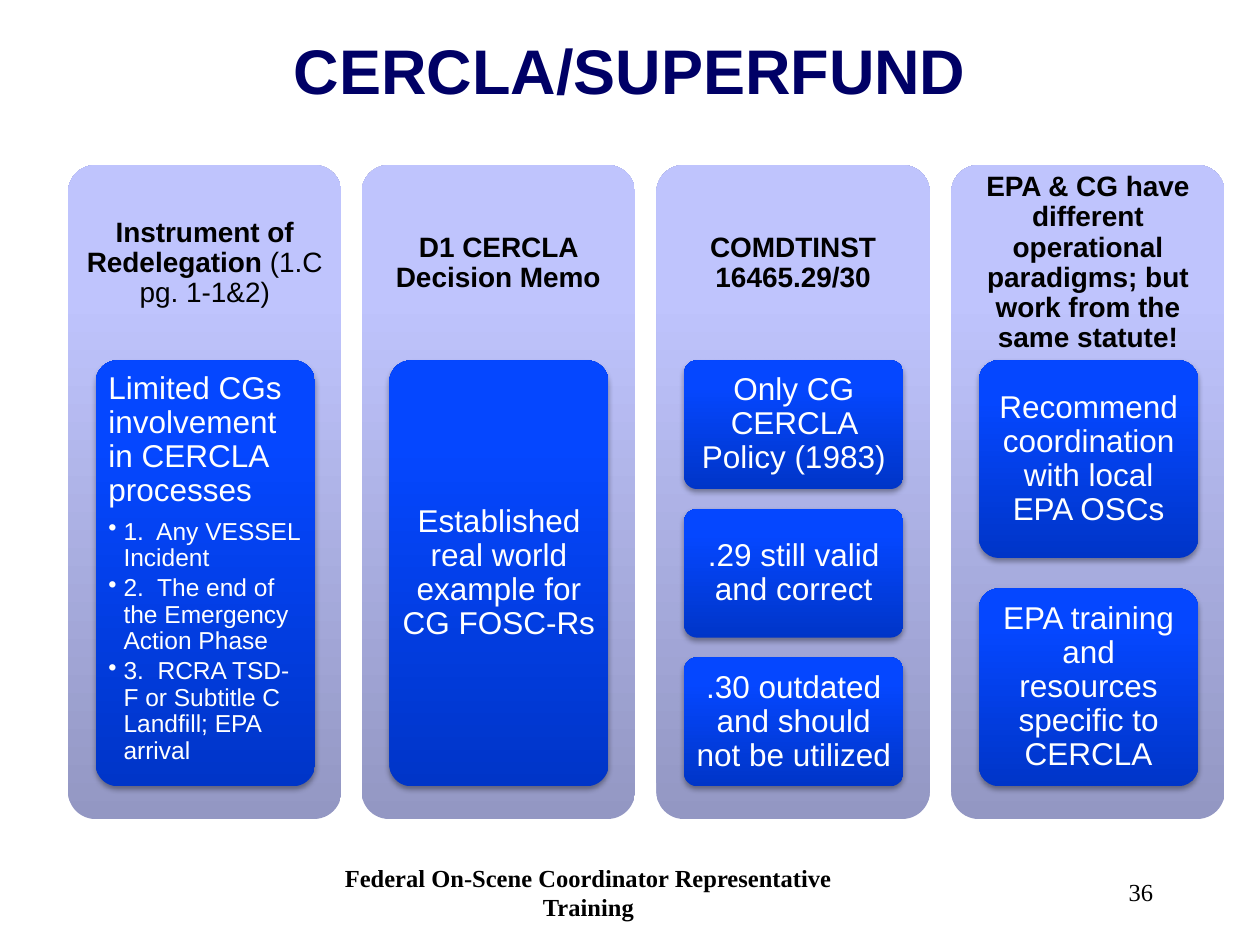
from copy import deepcopy

from lxml import etree
from pptx import Presentation
from pptx.dml.color import RGBColor
from pptx.enum.shapes import MSO_SHAPE
from pptx.enum.text import MSO_ANCHOR, PP_ALIGN
from pptx.oxml.ns import qn
from pptx.util import Pt

PX = 9144
ROUND = MSO_SHAPE.ROUNDED_RECTANGLE
TOP, MID = MSO_ANCHOR.TOP, MSO_ANCHOR.MIDDLE
LEFT, MIDST, RIGHT = PP_ALIGN.LEFT, PP_ALIGN.CENTER, PP_ALIGN.RIGHT
PALE = ("9397C3", "BFC4FD", "BFC4FF")
DEEP = ("0035C8", "0547FF", "0648FF")
GAP = 0.154
PANELS = [
    ([("Instrument of Redelegation ", True), ("(1.C pg. 1-1&2)", False)],
     [["Limited CGs involvement in CERCLA processes",
       "1.  Any VESSEL Incident",
       "2.  The end of the Emergency Action Phase",
       "3.  RCRA TSD-F or Subtitle C Landfill; EPA arrival"]]),
    ([("D1 CERCLA Decision Memo", True)],
     [["Established real world example for CG FOSC-Rs"]]),
    ([("COMDTINST 16465.29/30", True)],
     [["Only CG CERCLA Policy (1983)"],
      [".29 still valid and correct"],
      [".30 outdated and should not be utilized"]]),
    ([("EPA & CG have different operational paradigms; "
       "but work from the same statute!", True)],
     [["Recommend coordination with local EPA OSCs"],
      ["EPA training and resources specific to CERCLA"]]),
]


def rgb(code):
    """Turn a hex string into a colour."""
    return RGBColor.from_string(code)


def px(*sizes):
    """Turn px lengths into EMU."""
    return [round(size * PX) for size in sizes]


def child(node, tag, **attrs):
    """Add a drawing element under a node."""
    return etree.SubElement(node, qn(tag), attrs)


def frame(shape, anchor, inset, wrap=True):
    """Set up the text frame of a shape."""
    text = shape.text_frame
    sides = px(*inset)
    form = {"margin_left": sides[0], "margin_top": sides[1],
            "margin_right": sides[0], "margin_bottom": sides[1],
            "vertical_anchor": anchor, "word_wrap": wrap}
    for name, value in form.items():
        setattr(text, name, value)
    return text


def write(para, runs, size, color="000000", face="Arial", **form):
    """Fill a paragraph with runs of text and weight."""
    for name, value in form.items():
        setattr(para, name, value)
    for words, bold in runs:
        run = para.add_run()
        run.text = words
        font = {"size": Pt(size), "name": face, "bold": bold}
        for name, value in font.items():
            setattr(run.font, name, value)
        run.font.color.rgb = rgb(color)


def block(slide, box, tones):
    """Draw a rounded block with a vertical gradient."""
    shape = slide.shapes.add_shape(ROUND, *px(*box))
    shape.adjustments[0] = 0.1
    shape.shadow.inherit = False
    shape.line.fill.background()
    shape.fill.gradient()
    shape.fill.gradient_angle = 90
    stops = shape._element.spPr.find(".//" + qn("a:gsLst"))
    stops.append(deepcopy(stops[-1]))
    for stop, tone, place in zip(shape.fill.gradient_stops, tones, (0, 0.8, 1)):
        stop.color.rgb = rgb(tone)
        stop.position = place
    return shape


def shade(shape):
    """Give a block a soft shadow below it."""
    effects = shape._element.spPr.find(qn("a:effectLst"))
    outer = child(effects, "a:outerShdw", blurRad=str(Pt(3.1)),
                  dist=str(Pt(1.8)), dir="5400000", rotWithShape="0")
    tone = child(outer, "a:srgbClr", val="000000")
    child(tone, "a:alpha", val="35000")


def bullet(para):
    """Indent a paragraph and give it a bullet."""
    props = para._p.get_or_add_pPr()
    indent = px(12)[0]
    props.set("marL", str(indent))
    props.set("indent", str(-indent))
    child(props, "a:buChar", char="•")
    para.level = 1


def card(slide, box, lines):
    """Draw a card with a lead line and any bullets."""
    shape = block(slide, box, DEEP)
    shade(shape)
    listed = len(lines) > 1
    text = frame(shape, TOP if listed else MID, (5, 4))
    lead, *points = lines
    write(text.paragraphs[0], [(lead, False)], 18, "FFFFFF", line_spacing=0.9,
          alignment=LEFT if listed else MIDST, space_after=Pt(6.3))
    for point in points:
        para = text.add_paragraph()
        bullet(para)
        write(para, [(point, False)], 14, "FFFFFF", line_spacing=0.9,
              alignment=LEFT, space_after=Pt(2.1))


def panel(slide, box, head, cards):
    """Draw a panel with its heading and an even stack of cards."""
    left, top, wide, high = box
    block(slide, box, PALE)
    label = slide.shapes.add_textbox(*px(left, top, wide, 156))
    write(frame(label, MID, (7, 7)).paragraphs[0], head, 16,
          alignment=MIDST, line_spacing=0.9)
    count = len(cards)
    tall = 338 / (count + GAP * (count - 1))
    for row, lines in enumerate(cards):
        place = top + 155 + row * tall * (1 + GAP)
        card(slide, (left + 22, place, wide - 43, tall), lines)


def heading(slide, box, words):
    """Place and format the title."""
    title = slide.shapes.title
    title.left, title.top, title.width, title.height = px(*box)
    write(frame(title, MID, (10, 5)).paragraphs[0], [(words, True)], 36,
          "000066", alignment=MIDST)


def footer(slide, box, words, bold, align):
    """Place one line of footer text."""
    note = slide.shapes.add_textbox(*px(*box))
    write(frame(note, MID, (10, 5), False).paragraphs[0], [(words, bold)], 14,
          face="Times New Roman", alignment=align)


def main():
    """Build the slide and save it."""
    deck = Presentation()
    deck.slide_width, deck.slide_height = px(1000, 750)
    slide = deck.slides.add_slide(deck.slide_layouts[5])
    heading(slide, (27, 15, 946, 80), "CERCLA/SUPERFUND")
    for col, (head, cards) in enumerate(PANELS):
        panel(slide, (54 + col * 701 // 3, 131, 217, 519), head, cards)
    footer(slide, (717, 683, 208, 50), "36", False, RIGHT)
    footer(slide, (242, 683, 450, 50),
           "Federal On-Scene Coordinator Representative Training", True, MIDST)
    deck.save("out.pptx")


if __name__ == "__main__":
    main()
